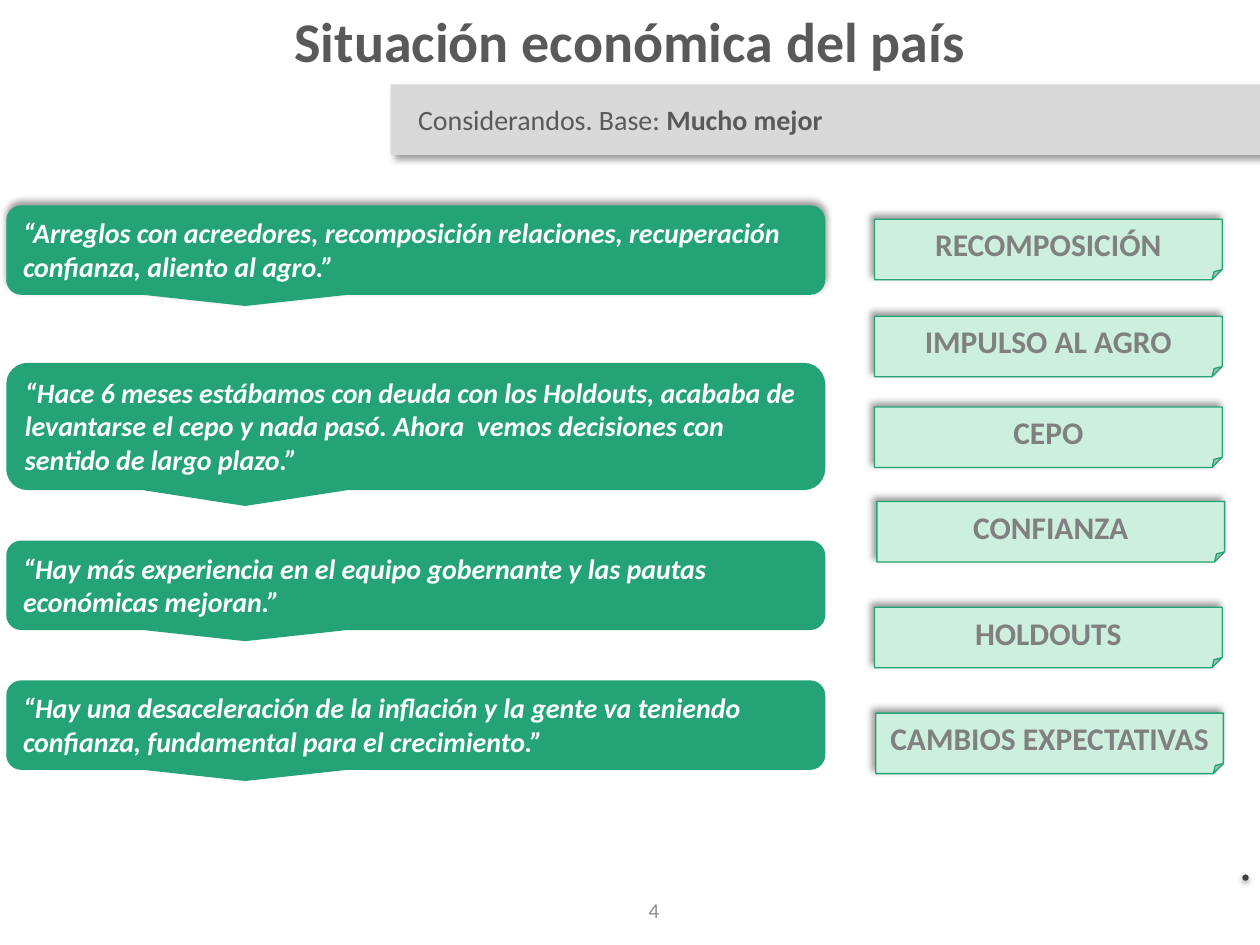
from lxml import etree
from pptx import Presentation
from pptx.dml.color import RGBColor
from pptx.enum.shapes import MSO_SHAPE
from pptx.enum.text import MSO_ANCHOR, PP_ALIGN
from pptx.oxml.ns import qn
from pptx.util import Inches, Pt

TOP, MIDDLE = MSO_ANCHOR.TOP, MSO_ANCHOR.MIDDLE
LEFT, CENTER, RIGHT = PP_ALIGN.LEFT, PP_ALIGN.CENTER, PP_ALIGN.RIGHT
RECT, OVAL = MSO_SHAPE.RECTANGLE, MSO_SHAPE.OVAL
CALLOUT, NOTE = MSO_SHAPE.ROUNDED_RECTANGULAR_CALLOUT, MSO_SHAPE.FOLDED_CORNER

FONT = "Calibri"
WIDTH, HEIGHT = 10, 7.5
COLORS = {
    "green": "24A476", "mint": "CDEFDE", "bar": "D9D9D9", "heading": "595959",
    "tag": "808080", "number": "8C8C8C", "dot": "404040",
    "white": "FFFFFF", "shadow": "000000",
}

QUOTE_LEFT, QUOTE_WIDTH = 0.05, 6.5
QUOTES = [  # top, height, shadow angle, text
    (1.63, 0.71, 270, "“Arreglos con acreedores, recomposición relaciones, "
                      "recuperación confianza, aliento al agro.”"),
    (2.88, 1.01, None, "“Hace 6 meses estábamos con deuda con los Holdouts, "
                       "acababa de levantarse el cepo y nada pasó. Ahora  vemos "
                       "decisiones con sentido de largo plazo.”"),
    (4.29, 0.71, None, "“Hay más experiencia en el equipo gobernante y las "
                       "pautas económicas mejoran.”"),
    (5.4, 0.71, None, "“Hay una desaceleración de la inflación y la gente va "
                      "teniendo confianza, fundamental para el crecimiento.”"),
]
TAG_WIDTH, TAG_HEIGHT = 2.76, 0.48
TAGS = [  # left, top, text
    (6.94, 1.74, "RECOMPOSICIÓN"),
    (6.94, 2.51, "IMPULSO AL AGRO"),
    (6.94, 3.23, "CEPO"),
    (6.96, 3.98, "CONFIANZA"),
    (6.94, 4.82, "HOLDOUTS"),
    (6.95, 5.66, "CAMBIOS EXPECTATIVAS"),
]


def rgb(name):
    return RGBColor.from_string(COLORS[name])


def inches(box):
    return [Inches(v) for v in box]


def add_shadow(s, angle, opacity=40, blur=4, distance=3):
    effects = s._element.spPr.find(qn("a:effectLst"))
    outer = etree.SubElement(
        effects, qn("a:outerShdw"), blurRad=str(Pt(blur)), dist=str(Pt(distance)),
        dir=str(angle * 60000), algn="ctr", rotWithShape="0")
    color = etree.SubElement(outer, qn("a:srgbClr"), val=COLORS["shadow"])
    etree.SubElement(color, qn("a:alpha"), val=str(opacity * 1000))


def add_block(slide, kind, box, fill, line=None):
    s = slide.shapes.add_shape(kind, *inches(box))
    s.fill.solid()
    s.fill.fore_color.rgb = rgb(fill)
    if line:
        s.line.color.rgb = rgb(line)
        s.line.width = Pt(0.75)
    else:
        s.line.fill.background()
    s.shadow.inherit = False
    return s


def write(s, runs, size, color, align=LEFT, anchor=TOP, bold=None, italic=None):
    """Fill the shape with one paragraph made of (text, bold) runs or a string."""
    tf = s.text_frame
    tf.word_wrap = True
    tf.vertical_anchor = anchor
    p = tf.paragraphs[0]
    p.alignment = align
    p.font.name, p.font.size = FONT, Pt(size)
    p.font.bold, p.font.italic = bold, italic
    p.font.color.rgb = rgb(color)
    for text, run_bold in [(runs, None)] if isinstance(runs, str) else runs:
        r = p.add_run()
        r.text = text
        r.font.bold = run_bold
    return p


def add_title(slide, box):
    s = slide.shapes.title
    s.left, s.top, s.width, s.height = inches(box)
    write(s, "Situación económica del país", 32, "heading", CENTER, bold=True)


def add_subtitle_bar(slide, box):
    s = add_block(slide, RECT, box, "bar")
    add_shadow(s, 45)
    p = write(s, [("Considerandos. Base: ", None), ("Mucho mejor", True)],
              16, "heading", anchor=MIDDLE)
    p._p.get_or_add_pPr().set("marL", str(Inches(0.12)))


def add_quote(slide, box, text, angle):
    s = add_block(slide, CALLOUT, box, "green")
    if angle is not None:
        add_shadow(s, angle)
    write(s, text, 16, "white", bold=True, italic=True)


def add_tag(slide, box, text):
    s = add_block(slide, NOTE, box, "mint", "green")
    add_shadow(s, 225)
    write(s, text, 18, "tag", CENTER, bold=True)


def add_footer(slide, number_box, dot_box):
    s = slide.shapes.add_textbox(*inches(number_box))
    write(s, "4", 12, "number", RIGHT, MIDDLE)
    dot = add_block(slide, OVAL, dot_box, "dot")
    add_shadow(dot, 90, 38, 3.1, 1.6)


def main():
    prs = Presentation()
    prs.slide_width, prs.slide_height = Inches(WIDTH), Inches(HEIGHT)
    slide = prs.slides.add_slide(prs.slide_layouts[5])
    add_title(slide, (0, 0, WIDTH, 0.64))
    add_subtitle_bar(slide, (3.1, 0.67, 6.96, 0.56))
    for top, height, angle, text in QUOTES:
        add_quote(slide, (QUOTE_LEFT, top, QUOTE_WIDTH, height), text, angle)
    for left, top, text in TAGS:
        add_tag(slide, (left, top, TAG_WIDTH, TAG_HEIGHT), text)
    add_footer(slide, (3, HEIGHT - 0.55, 2.33, 0.55), (9.86, 6.94, 0.05, 0.05))
    prs.save("out.pptx")


if __name__ == "__main__":
    main()
